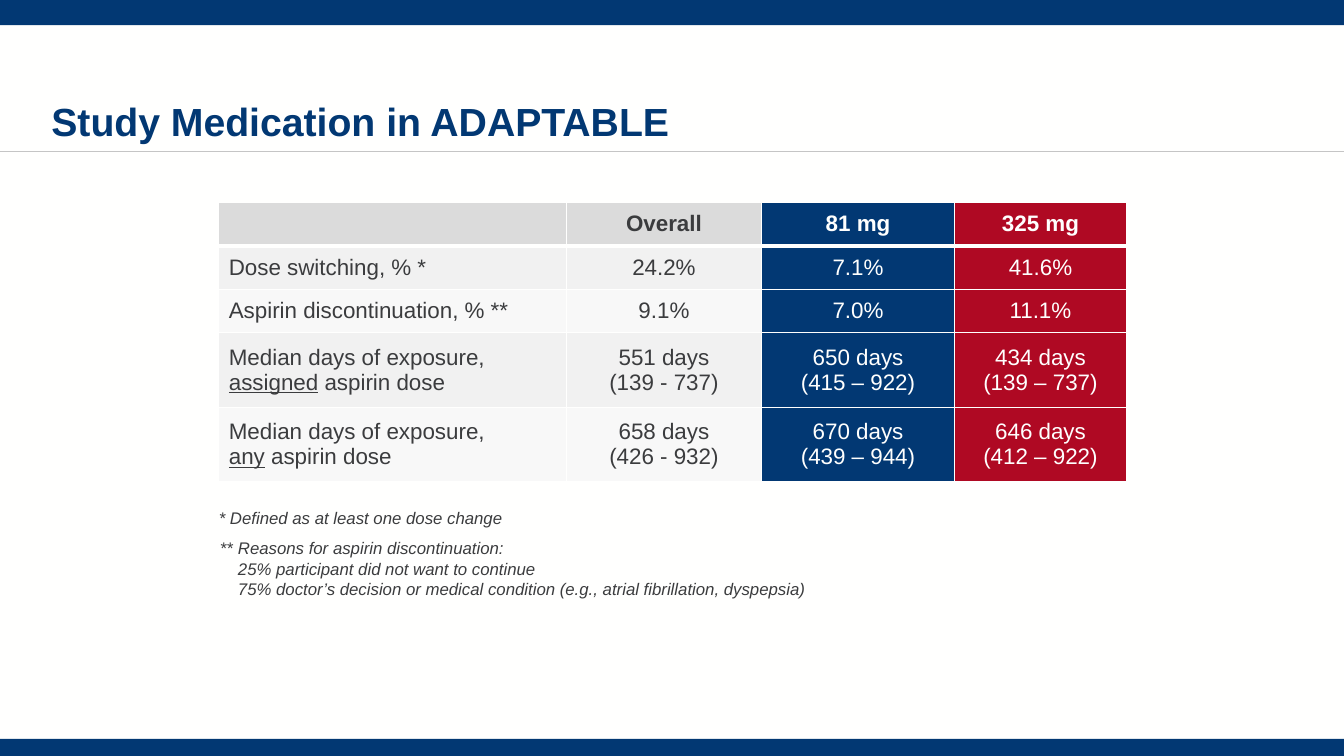
from lxml.etree import SubElement
from pptx import Presentation
from pptx.dml.color import RGBColor
from pptx.enum.shapes import MSO_CONNECTOR, MSO_SHAPE
from pptx.enum.text import MSO_ANCHOR, PP_ALIGN
from pptx.oxml.ns import qn
from pptx.util import Emu, Inches, Pt

WIDTH, HEIGHT = 13.33, 7.5
NAVY, RED, PAPER, INK, RULE = "023873", "AF0923", "FFFFFE", "3B3C3E", "C5C5C5"
HEADER_GREY, BAND_GREYS = "DBDBDB", ("F1F1F1", "F8F8F8")

# Table grid; underscores enclose underlined words
LEFT, TABLE_TOP, TABLE_WIDTH = 2.17, 2.01, 9
COLUMNS = (3.45, 1.93, 1.92, 1.7)
ROWS = (0.43, 0.43, 0.43, 0.74, 0.74)
MEDICATION = (
    ("", "Overall", "81 mg", "325 mg"),
    ("Dose switching, % *", "24.2%", "7.1%", "41.6%"),
    ("Aspirin discontinuation, % **", "9.1%", "7.0%", "11.1%"),
    ("Median days of exposure,\n_assigned_ aspirin dose",
     "551 days\n(139 - 737)", "650 days\n(415 – 922)", "434 days\n(139 – 737)"),
    ("Median days of exposure,\n_any_ aspirin dose",
     "658 days\n(426 - 932)", "670 days\n(439 – 944)", "646 days\n(412 – 922)"),
)
REASONS = ("**\tReasons for aspirin discontinuation:\v"
           "25% participant did not want to continue\v"
           "75% doctor’s decision or medical condition "
           "(e.g., atrial fibrillation, dyspepsia)")


def color(value):
    return RGBColor.from_string(value)


def style(font, size, ink, bold=False, italic=False):
    font.name, font.size = "Arial", Pt(size)
    font.bold, font.italic = bold, italic
    font.color.rgb = color(ink)


def add_band(page, top, height):
    band = page.shapes.add_shape(MSO_SHAPE.RECTANGLE, 0, Inches(top),
                                 Inches(WIDTH), Inches(height))
    band.shadow.inherit = False
    band.fill.solid()
    band.fill.fore_color.rgb = color(NAVY)
    band.line.fill.background()


def add_rule(page, top):
    rule = page.shapes.add_connector(MSO_CONNECTOR.STRAIGHT, 0, Inches(top),
                                     Inches(WIDTH), Inches(top))
    rule.line.color.rgb = color(RULE)
    rule.line.width = Pt(0.75)
    SubElement(rule._element.spPr, qn("a:effectLst"))


def add_text(page, text, place, size, ink, inset=0.0, anchor=MSO_ANCHOR.TOP, **weight):
    box = page.shapes.add_textbox(*map(Inches, place))
    frame = box.text_frame
    frame.word_wrap = True
    frame.vertical_anchor = anchor
    frame.margin_left = frame.margin_right = 0
    frame.margin_top = frame.margin_bottom = Inches(inset)
    para = frame.paragraphs[0]
    para.text = text
    for span in para.runs:
        style(span.font, size, ink, **weight)
    return para


def add_borders(cell, row):
    widths = {"L": 1, "R": 1, "T": 3 if row == 1 else 1, "B": 3 if row == 0 else 1}
    properties = cell._tc.get_or_add_tcPr()
    for side, width in widths.items():
        border = SubElement(properties, qn(f"a:ln{side}"), w=str(Pt(width)))
        fill = SubElement(border, qn("a:solidFill"))
        SubElement(fill, qn("a:srgbClr"), val=PAPER)


def fill_cell(cell, text, row, column):
    grey = HEADER_GREY if row == 0 else BAND_GREYS[(row - 1) % 2]
    add_borders(cell, row)
    cell.fill.solid()
    cell.fill.fore_color.rgb = color((grey, grey, NAVY, RED)[column])
    cell.vertical_anchor = MSO_ANCHOR.MIDDLE
    cell.text_frame.text = text
    for para in cell.text_frame.paragraphs:
        para.alignment = PP_ALIGN.CENTER if column else PP_ALIGN.LEFT
        pieces = para.text.split("_")
        para.text = ""
        for index, piece in enumerate(pieces):
            if piece:
                span = para.add_run()
                span.text = piece
                style(span.font, 16, PAPER if column > 1 else INK, bold=row == 0)
                span.font.underline = index % 2 == 1


def add_medication_table(page):
    table = page.shapes.add_table(
        len(ROWS), len(COLUMNS), Inches(LEFT), Inches(TABLE_TOP),
        Inches(TABLE_WIDTH), Inches(sum(ROWS))).table
    table.horz_banding = False
    for column, width in zip(table.columns, COLUMNS):
        column.width = Inches(width)
    for row, height in zip(table.rows, ROWS):
        row.height = Inches(height)
    for row, texts in enumerate(MEDICATION):
        for column, text in enumerate(texts):
            fill_cell(table.cell(row, column), text, row, column)


def main():
    deck = Presentation()
    deck.slide_width, deck.slide_height = Inches(WIDTH), Inches(HEIGHT)
    page = deck.slides.add_slide(deck.slide_layouts[6])
    page.background.fill.solid()
    page.background.fill.fore_color.rgb = color(PAPER)

    # Frame and title
    add_rule(page, HEIGHT / 5)
    add_band(page, 0, 0.25)
    add_band(page, HEIGHT - 0.17, 0.17)
    title = add_text(page, "Study Medication in ADAPTABLE", (0.51, 0.19, 11.14, 1.25),
                     28, NAVY, anchor=MSO_ANCHOR.BOTTOM, bold=True)
    title.line_spacing = 0.9

    # Table and footnotes
    add_medication_table(page)
    reasons = add_text(page, REASONS, (LEFT, 5.29, TABLE_WIDTH, 0.71),
                       12, INK, inset=0.05, italic=True)
    indents = reasons._p.get_or_add_pPr()
    indents.set("marL", str(Emu(Inches(0.19))))
    indents.set("indent", str(Emu(Inches(-0.18))))
    add_text(page, "* Defined as at least one dose change",
             (LEFT, 4.99, TABLE_WIDTH, 0.3), 12, INK, inset=0.05, italic=True)

    deck.save("out.pptx")


if __name__ == "__main__":
    main()
